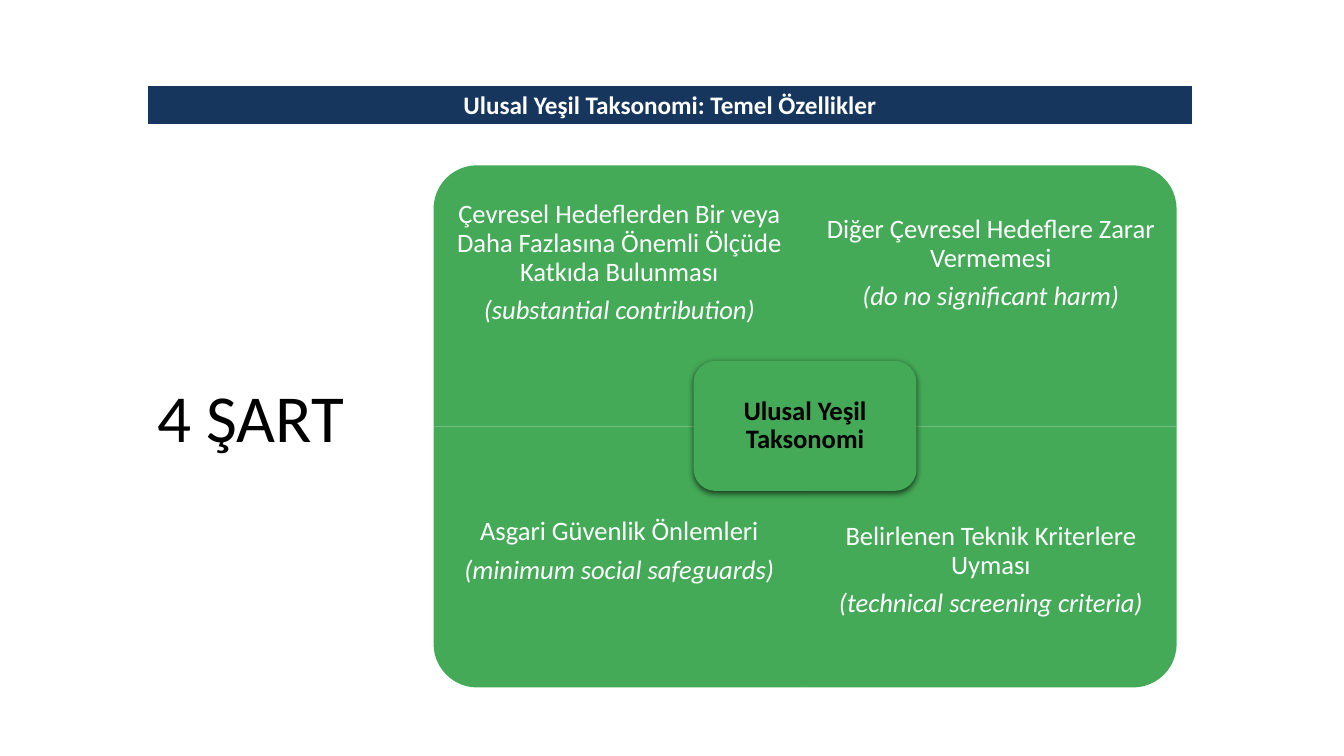
"""Build the slide on the four conditions of the national green taxonomy."""
from lxml.etree import SubElement
from pptx import Presentation
from pptx.dml.color import RGBColor
from pptx.enum.shapes import MSO_SHAPE
from pptx.enum.text import MSO_ANCHOR, MSO_AUTO_SIZE, PP_ALIGN
from pptx.oxml import parse_xml
from pptx.oxml.ns import qn
from pptx.util import Inches, Pt

COLORS = {"navy": "17365D", "green": "44AA57", "white": "FFFFFF", "black": "000000"}
NAMESPACE = "http://schemas.openxmlformats.org/drawingml/2006/main"


def style_paragraph(para, size, color, bold=False, italic=False, align=PP_ALIGN.CENTER):
    para.alignment = align
    for span in para.runs:
        span.font.name = "Calibri"
        span.font.size = Pt(size)
        span.font.bold = bold
        span.font.italic = italic
        span.font.color.rgb = RGBColor.from_string(COLORS[color])


def add_green_shape(kind, left, top, width, height):
    shape = page.shapes.add_shape(kind, Inches(left), Inches(top), Inches(width), Inches(height))
    shape.shadow.inherit = False
    shape.fill.solid()
    shape.fill.fore_color.rgb = RGBColor.from_string(COLORS["green"])
    shape.line.fill.background()
    return shape


deck = Presentation()
deck.slide_width, deck.slide_height = Inches(13.33), Inches(7.5)
page = deck.slides.add_slide(deck.slide_layouts[6])

banner = page.shapes.add_table(2, 1, Inches(1.46), Inches(0.85), Inches(10.37), Inches(0.96)).table
banner.rows[0].height, banner.rows[1].height = Inches(0.4), Inches(0.56)
for row, (fill, bottom_width) in enumerate([("navy", 3), ("white", 1)]):
    cell = banner.cell(row, 0)
    cell.margin_top = cell.margin_bottom = Inches(0.04)
    cell.vertical_anchor = MSO_ANCHOR.MIDDLE
    properties = cell._tc.get_or_add_tcPr()
    for side, width in [("lnL", 1), ("lnR", 1), ("lnT", 1 if row == 0 else 3), ("lnB", bottom_width)]:
        border = SubElement(properties, qn(f"a:{side}"), w=str(Pt(width)))
        border_fill = SubElement(border, qn("a:solidFill"))
        SubElement(border_fill, qn("a:srgbClr"), val=COLORS["white"])
    cell.fill.solid()
    cell.fill.fore_color.rgb = RGBColor.from_string(COLORS[fill])
title = banner.cell(0, 0).text_frame
title.text = "Ulusal Yeşil Taksonomi: Temel Özellikler"
style_paragraph(title.paragraphs[0], 18, "white", bold=True)

grid_left, grid_top, quad_width, quad_height, label_height = 4.3, 1.64, 3.685, 2.59, 1.94
conditions = [
    (0, 0, 270, 0.15, "Çevresel Hedeflerden Bir veya Daha Fazlasına Önemli Ölçüde Katkıda Bulunması",
     "(substantial contribution)"),
    (1, 0, 0, 0.15, "Diğer Çevresel Hedeflere Zarar Vermemesi", "(do no significant harm)"),
    (0, 1, 180, 0.91, "Asgari Güvenlik Önlemleri", "(minimum social safeguards)"),
    (1, 1, 90, 0.53, "Belirlenen Teknik Kriterlere Uyması", "(technical screening criteria)"),
]
for column, row, rotation, bottom_inset, condition, english in conditions:
    left = grid_left + column * quad_width
    top = grid_top + row * quad_height
    width, height = (quad_height, quad_width) if rotation in (90, 270) else (quad_width, quad_height)
    quadrant = add_green_shape(MSO_SHAPE.ROUND_1_RECTANGLE, left + (quad_width - width) / 2,
                               top + (quad_height - height) / 2, width, height)
    quadrant.rotation = rotation

    label_top = top + row * (quad_height - label_height)
    box = page.shapes.add_textbox(Inches(left), Inches(label_top), Inches(quad_width), Inches(label_height))
    frame = box.text_frame
    frame.word_wrap = True
    frame.vertical_anchor = MSO_ANCHOR.MIDDLE
    frame.margin_left = frame.margin_right = frame.margin_top = Inches(0.15)
    frame.margin_bottom = Inches(bottom_inset)
    frame.text = f"{condition}\n{english}"
    for para, italic in zip(frame.paragraphs, (False, True)):
        style_paragraph(para, 19, "white", italic=italic)
        para.line_spacing = 0.9
        para.space_after = Pt(6.65)

center = add_green_shape(MSO_SHAPE.ROUNDED_RECTANGLE, 6.88, 3.58, 2.21, 1.29)
effects = center._element.spPr.find(qn("a:effectLst"))
effects.append(parse_xml(
    f'<a:outerShdw xmlns:a="{NAMESPACE}" blurRad="{Pt(4.5)}" dist="{Pt(1.5)}" dir="5400000" rotWithShape="0">'
    f'<a:srgbClr val="{COLORS["black"]}"><a:alpha val="63000"/></a:srgbClr></a:outerShdw>'))
frame = center.text_frame
frame.word_wrap = True
frame.vertical_anchor = MSO_ANCHOR.MIDDLE
frame.margin_left = frame.margin_right = frame.margin_top = frame.margin_bottom = Inches(0.08)
frame.text = "Ulusal Yeşil Taksonomi"
style_paragraph(frame.paragraphs[0], 19, "black", bold=True)
frame.paragraphs[0].line_spacing = 0.9

headline = page.shapes.add_textbox(Inches(1.46), Inches(3.67), Inches(2.24), Inches(0.91)).text_frame
headline.word_wrap = False
headline.auto_size = MSO_AUTO_SIZE.SHAPE_TO_FIT_TEXT
headline.text = "4 ŞART"
style_paragraph(headline.paragraphs[0], 48, "black", align=PP_ALIGN.LEFT)

deck.save("out.pptx")
